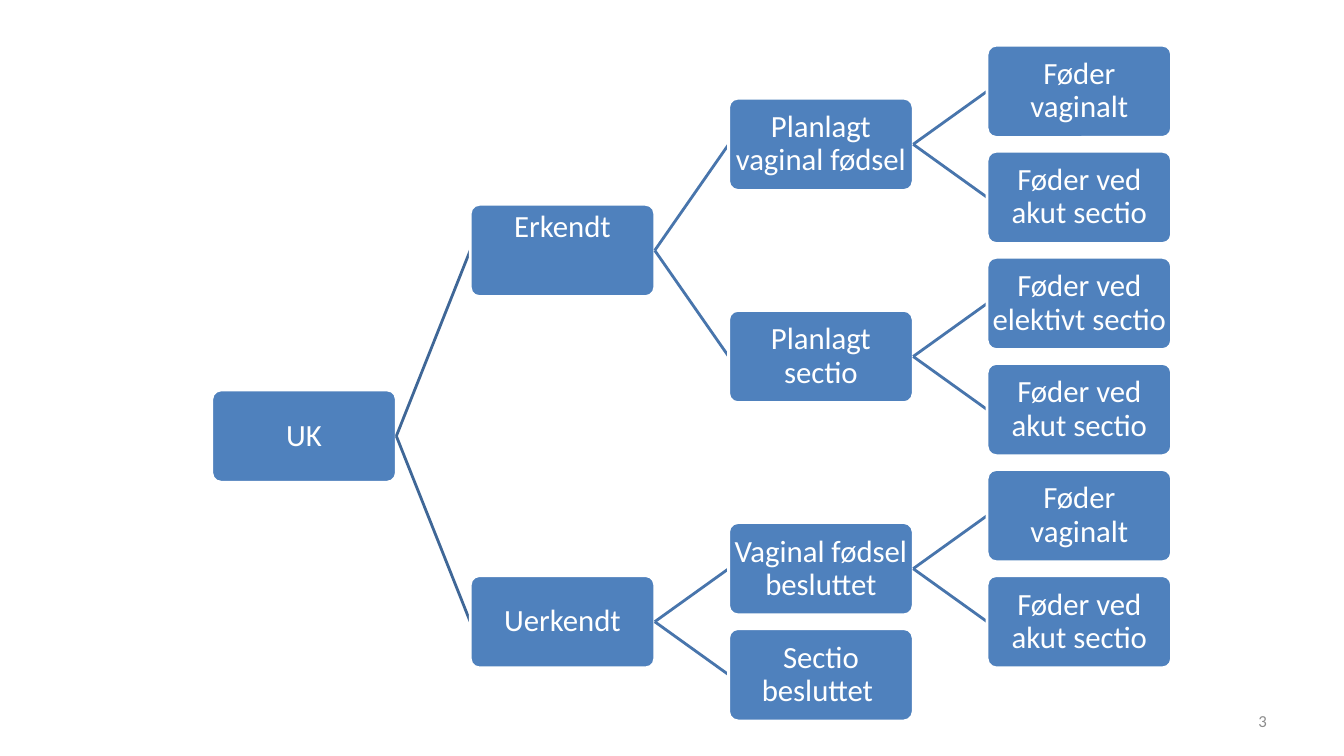
from dataclasses import dataclass

from lxml import etree
from pptx import Presentation
from pptx.dml.color import RGBColor
from pptx.enum import shapes, text
from pptx.oxml import ns
from pptx.util import Pt


@dataclass(frozen=True)
class Theme:
    font: str = "Calibri"
    box: str = "4F81BD"
    white: str = "FFFFFF"
    root_link: str = "3F6797"
    link: str = "4875AC"
    number: str = "8C8C8C"
    box_size: int = 22
    number_size: int = 12
    line: int = 2


THEME = Theme()

# Grid of the tree: columns are levels, rows are outcomes
BOX_W, BOX_H = 131.8, 65.9
COL_X, COL_STEP = 151.3, 184.6
ROW_Y, ROW_STEP = 65.2, 75.78

# (label, children) for a branch, (label, row) for a leaf
TREE = ("UK", [
    ("Erkendt", [
        ("Planlagt vaginal fødsel", [
            ("Føder vaginalt", 0),
            ("Føder ved akut sectio", 1)]),
        ("Planlagt sectio", [
            ("Føder ved elektivt sectio", 2),
            ("Føder ved akut sectio", 3)])]),
    ("Uerkendt", [
        ("Vaginal fødsel besluttet", [
            ("Føder vaginalt", 4),
            ("Føder ved akut sectio", 5)]),
        ("Sectio besluttet ", 5.5)])])

# Extra space at the foot of a box, which lifts its label
LIFT = {"Erkendt": 32}


def rgb(value):
    return RGBColor.from_string(value)


def write(sp, content, *, size, color, align, spacing=1.0, insets=None):
    tf = sp.text_frame
    tf.word_wrap = True
    tf.vertical_anchor = text.MSO_ANCHOR.MIDDLE
    if insets:
        (tf.margin_left, tf.margin_top,
         tf.margin_right, tf.margin_bottom) = map(Pt, insets)
    p = tf.paragraphs[0]
    p.alignment = align
    p.line_spacing = spacing
    r = p.add_run()
    r.text = content
    r.font.name = THEME.font
    r.font.size = Pt(size)
    r.font.color.rgb = rgb(color)


def row_of(node):
    """A branch stands midway between its first and last child."""
    rest = node[1]
    if isinstance(rest, list):
        return (row_of(rest[0]) + row_of(rest[-1])) / 2
    return rest


def add_box(s, label, level, row):
    sp = s.shapes.add_shape(
        shapes.MSO_SHAPE.ROUNDED_RECTANGLE,
        Pt(COL_X + level * COL_STEP), Pt(ROW_Y + row * ROW_STEP - BOX_H / 2),
        Pt(BOX_W), Pt(BOX_H))
    sp.adjustments[0] = 0.1
    sp.shadow.inherit = False
    sp.fill.solid()
    sp.fill.fore_color.rgb = rgb(THEME.box)
    sp.line.color.rgb = rgb(THEME.white)
    sp.line.width = Pt(THEME.line)
    write(sp, label, size=THEME.box_size, color=THEME.white,
          align=text.PP_ALIGN.CENTER, spacing=0.9,
          insets=(1, 1, 1, 1 + LIFT.get(label, 0)))
    return sp


def add_link(s, parent, child, color):
    link = s.shapes.add_connector(shapes.MSO_CONNECTOR.STRAIGHT, 0, 0, 0, 0)
    link.begin_connect(parent, 3)
    link.end_connect(child, 1)
    link.line.color.rgb = rgb(color)
    link.line.width = Pt(THEME.line)
    etree.SubElement(link.element.spPr, ns.qn("a:effectLst"))
    # The child's white outline covers the end of the link
    child.element.addprevious(link.element)


def add_branch(s, node, level=0):
    label, rest = node
    box = add_box(s, label, level, row_of(node))
    if isinstance(rest, list):
        for child in rest:
            child_box = add_branch(s, child, level + 1)
            add_link(s, box, child_box, THEME.link if level else THEME.root_link)
    return box


def main():
    prs = Presentation()
    prs.slide_width, prs.slide_height = Pt(960), Pt(540)
    s = prs.slides.add_slide(prs.slide_layouts[6])

    # Decision tree
    add_branch(s, TREE)

    # Slide number
    number = s.shapes.add_textbox(Pt(688), Pt(500.5), Pt(224), Pt(28.8))
    write(number, "3", size=THEME.number_size, color=THEME.number,
          align=text.PP_ALIGN.RIGHT)

    prs.save("out.pptx")


if __name__ == "__main__":
    main()
